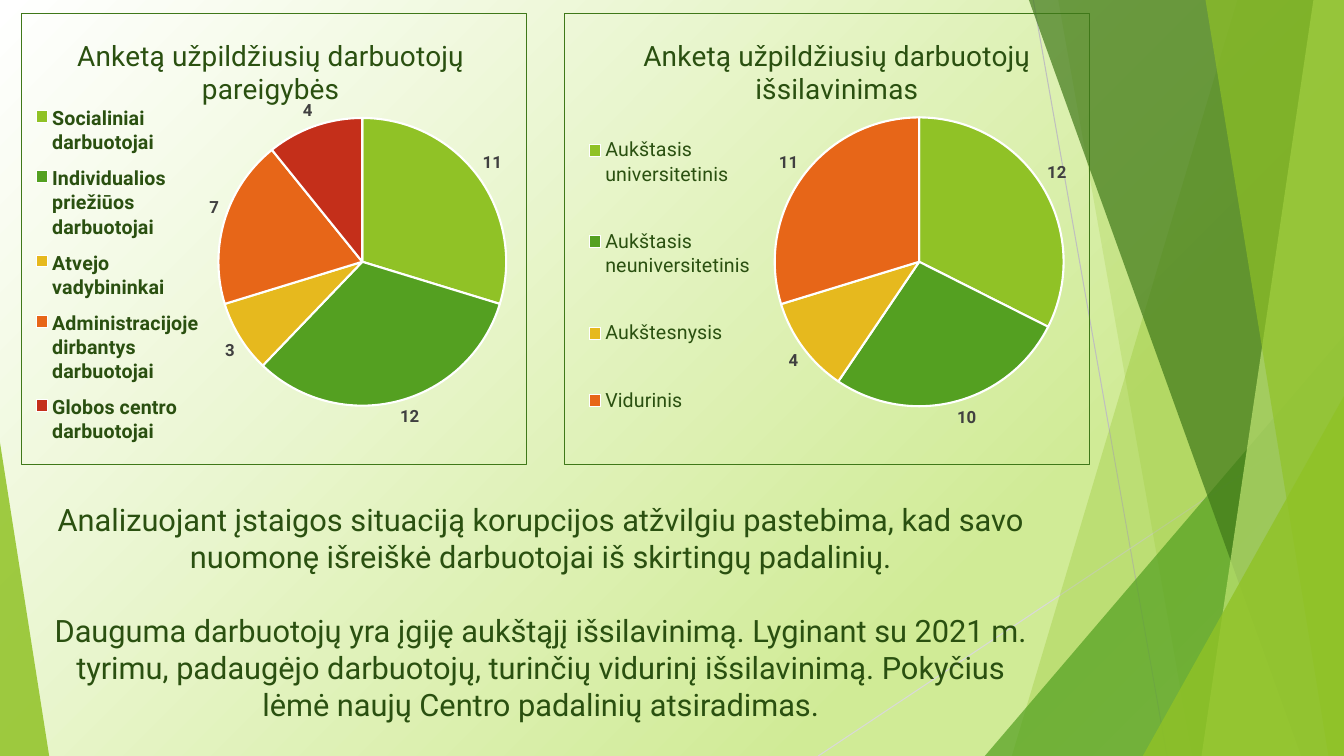
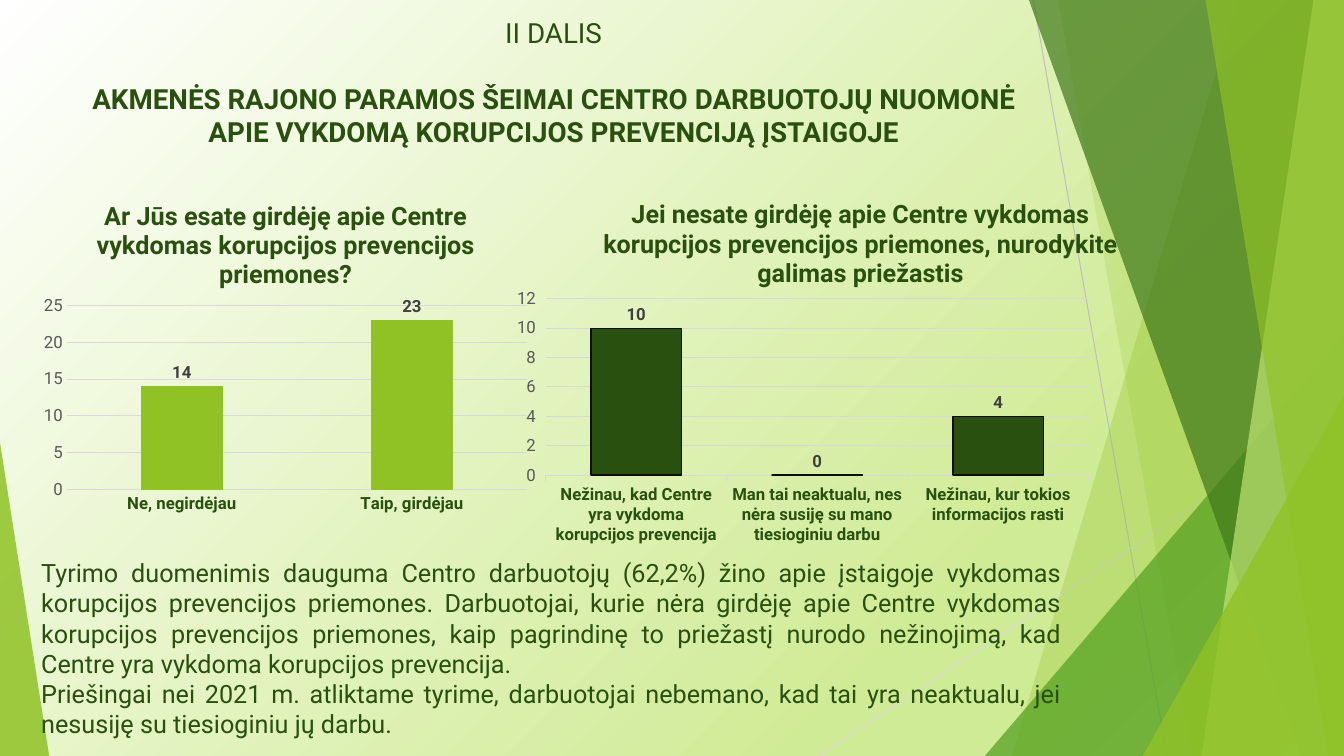
import dataclasses
import typing

import lxml.etree
import pptx
import pptx.chart.data
import pptx.dml.color
import pptx.enum.chart
import pptx.enum.shapes
import pptx.enum.text
import pptx.oxml.ns
import pptx.util

Cm = pptx.util.Cm
Pt = pptx.util.Pt
qn = pptx.oxml.ns.qn
Align = pptx.enum.text.PP_ALIGN
Tick = pptx.enum.chart.XL_TICK_MARK


@dataclasses.dataclass(frozen=True)
class Theme:
    font: str = "Roboto"
    ink: str = "2A5010"
    lime: str = "90C226"
    green: str = "54A021"
    forest: str = "3F7819"
    pale: str = "C0E474"
    white: str = "FFFFFF"
    grid: str = "D9D9D9"
    thread: str = "BFBFBF"
    axis: str = "595959"
    label: str = "404040"
    outline: str = "0D0D0D"
    slices: tuple[str, ...] = ("90C226", "54A021", "E6B91E", "E76618", "C42F1A")
    backdrop: tuple[tuple[int, str], ...] = (
        (0, "FFFFFF"), (74, "D0EB96"), (83, "D0EB96"), (100, "DFF1B9"))
    statement: float = 22
    pie_title: float = 20
    heading: float = 19.8
    body: float = 18
    legend: float = 14
    small: float = 12


THEME = Theme()
WIDTH, HEIGHT = 33.87, 19.05


class Frame(typing.NamedTuple):
    left: float
    top: float
    width: float
    height: float

    def lengths(self) -> tuple[int, ...]:
        return tuple(Cm(value) for value in self)


class Thread(typing.NamedTuple):
    start: tuple[float, float]
    end: tuple[float, float]
    color: str


class Ribbon(typing.NamedTuple):
    top_left: float
    bottom_left: float
    color: str
    opacity: int


class Wedge(typing.NamedTuple):
    frame: Frame
    apex: float
    color: str
    opacity: int


@dataclasses.dataclass(frozen=True)
class ChartPlan:
    frame: Frame
    title: str
    title_at: tuple[float, float]
    plot: tuple[float, float, float, float]
    categories: tuple[str, ...]
    values: tuple[int, ...]


@dataclasses.dataclass(frozen=True)
class PiePlan(ChartPlan):
    legend: tuple[float, float, float, float]
    legend_bold: bool


@dataclasses.dataclass(frozen=True)
class ColumnPlan(ChartPlan):
    color: str
    gap: int
    top: int
    step: int
    tick: typing.Any
    outline: str | None = None


DECOR = (
    Thread((26.04, 0), (29.41, HEIGHT), THEME.thread),
    Thread((WIDTH, 10.24), (20.62, HEIGHT), THEME.grid),
    Ribbon(31.19, 25.5, THEME.lime, 30),
    Ribbon(26.67, 30.05, THEME.lime, 20),
    Wedge(Frame(24.82, 8.46, 9.05, 10.59), 1, THEME.green, 72),
    Ribbon(25.93, 32.79, THEME.forest, 70),
    Ribbon(33.1, 30.28, THEME.pale, 70),
    Ribbon(30.38, 33.48, THEME.lime, 65),
    Wedge(Frame(28.8, 9.98, 5.07, 9.07), 1, THEME.lime, 80),
    Wedge(Frame(0, 11.15, 1.24, 7.9), 0, THEME.lime, 85),
)

PIES = (
    PiePlan(Frame(0.53, 0.33, 12.75, 11.4), "Anketą užpildžiusių darbuotojų pareigybės",
            (0.1, 0.04), (0.39, 0.23, 0.57, 0.64),
            ("Socialiniai darbuotojai", "Individualios priežiūos darbuotojai", "Atvejo vadybininkai",
             "Administracijoje dirbantys darbuotojai", "Globos centro darbuotojai"),
            (11, 12, 3, 7, 4), (0.02, 0.18, 0.34, 0.8), True),
    PiePlan(Frame(14.22, 0.33, 13.26, 11.4), "Anketą užpildžiusių darbuotojų išsilavinimas",
            (0.14, 0.04), (0.39, 0.23, 0.57, 0.64),
            ("Aukštasis universitetinis", "Aukštasis neuniversitetinis", "Aukštesnysis", "Vidurinis"),
            (12, 10, 4, 11), (0.03, 0.18, 0.34, 0.8), False),
)

COLUMNS = (
    ColumnPlan(Frame(0.79, 4.37, 12.75, 8.76),
               "Ar Jūs esate girdėję apie Centre vykdomas korupcijos prevencijos priemones?",
               (0.12, 0.06), (0.07, 0.38, 0.91, 0.53),
               ("Ne, negirdėjau", "Taip, girdėjau"), (14, 23), THEME.lime, 182, 25, 5, Tick.NONE),
    ColumnPlan(Frame(13.03, 4.27, 16.74, 9.88),
               "Jei nesate girdėję apie Centre vykdomas korupcijos prevencijos priemones, "
               "nurodykite galimas priežastis",
               (0.12, 0.06), (0.04, 0.33, 0.82, 0.45),
               ("Nežinau, kad Centre yra vykdoma korupcijos prevencija",
                "Man tai neaktualu, nes nėra susiję su mano tiesioginiu darbu",
                "Nežinau, kur tokios informacijos rasti"),
               (10, 0, 4), THEME.ink, 100, 12, 2, Tick.OUTSIDE, THEME.outline),
)


def rgb(color: str) -> pptx.dml.color.RGBColor:
    return pptx.dml.color.RGBColor.from_string(color)


def style_font(font, size: float, color: str, bold: bool = False) -> None:
    font.name, font.size, font.bold = THEME.font, Pt(size), bold
    font.color.rgb = rgb(color)


def write(para, text: str, *, size: float, bold: bool = False, align=None, after: float = 0) -> None:
    span = para.add_run()
    span.text = text
    style_font(span.font, size, THEME.ink, bold)
    para.alignment = align
    para.space_before, para.space_after = Pt(0), Pt(after)


def prepare(box, frame: Frame):
    box.left, box.top, box.width, box.height = frame.lengths()
    text_frame = box.text_frame
    text_frame.word_wrap = True
    text_frame.auto_size = pptx.enum.text.MSO_AUTO_SIZE.NONE
    text_frame.vertical_anchor = pptx.enum.text.MSO_ANCHOR.TOP
    return text_frame


def paint_background(master) -> None:
    fill = master.background.fill
    fill.gradient()
    fill.gradient_angle = 315
    stops = master.element.xpath("p:cSld/p:bg//a:gsLst")[0]
    for stop in list(stops):
        stops.remove(stop)
    for position, color in THEME.backdrop:
        stop = lxml.etree.SubElement(stops, qn("a:gs"), pos=str(position * 1000))
        lxml.etree.SubElement(stop, qn("a:srgbClr"), val=color)


def draw_thread(page, thread: Thread):
    ends = [Cm(value) for value in (*thread.start, *thread.end)]
    line = page.shapes.add_connector(pptx.enum.shapes.MSO_CONNECTOR.STRAIGHT, *ends)
    line.line.color.rgb = rgb(thread.color)
    line.line.width = Pt(0.75)
    lxml.etree.SubElement(line.element.xpath("p:spPr")[0], qn("a:effectLst"))
    return line


def draw_panel(page, panel: Ribbon | Wedge):
    if isinstance(panel, Ribbon):
        builder = page.shapes.build_freeform(Cm(panel.top_left), 0)
        corners = ((WIDTH, 0), (WIDTH, HEIGHT), (panel.bottom_left, HEIGHT))
        builder.add_line_segments([(Cm(x), Cm(y)) for x, y in corners], close=True)
        shape = builder.convert_to_shape()
    else:
        kind = pptx.enum.shapes.MSO_SHAPE.ISOSCELES_TRIANGLE
        shape = page.shapes.add_shape(kind, *panel.frame.lengths())
        shape.adjustments[0] = panel.apex
    shape.shadow.inherit = False
    shape.line.fill.background()
    shape.fill.solid()
    shape.fill.fore_color.rgb = rgb(panel.color)
    color = shape.element.xpath("p:spPr/a:solidFill/a:srgbClr")[0]
    lxml.etree.SubElement(color, qn("a:alpha"), val=str(panel.opacity * 1000))
    return shape


def decorate_layout(layout, page) -> None:
    for index, item in enumerate(DECOR):
        draw = draw_thread if isinstance(item, Thread) else draw_panel
        element = draw(page, item).element
        element.xpath(".//p:cNvPr")[0].set("id", str(100 + index))
        layout.shapes.element.insert(2 + index, element)


def set_layout(parent, index: int, place: tuple[float, ...], inner: bool = False) -> None:
    for old in parent.findall(qn("c:layout")):
        parent.remove(old)
    layout = lxml.etree.Element(qn("c:layout"))
    manual = lxml.etree.SubElement(layout, qn("c:manualLayout"))
    settings = [("layoutTarget", "inner")] if inner else []
    settings += [("xMode", "edge"), ("yMode", "edge")]
    settings += [(name, str(value)) for name, value in zip("xywh", place)]
    for name, value in settings:
        lxml.etree.SubElement(manual, qn(f"c:{name}"), val=value)
    parent.insert(index, layout)


def clear_fill(border: str | None = None):
    properties = lxml.etree.Element(qn("c:spPr"))
    lxml.etree.SubElement(properties, qn("a:noFill"))
    line = lxml.etree.SubElement(properties, qn("a:ln"), w=str(Pt(0.75)))
    if border:
        fill = lxml.etree.SubElement(line, qn("a:solidFill"))
        lxml.etree.SubElement(fill, qn("a:srgbClr"), val=border)
    else:
        lxml.etree.SubElement(line, qn("a:noFill"))
    return properties


def add_chart(page, plan: ChartPlan, kind, *, title_size: float, title_bold: bool, border: str | None = None):
    data = pptx.chart.data.CategoryChartData()
    data.categories = plan.categories
    data.add_series("Series 1", plan.values)
    chart = page.shapes.add_chart(kind, *plan.frame.lengths(), data).chart
    style_font(chart.font, THEME.small, THEME.ink)
    chart.has_legend = False
    write(chart.chart_title.text_frame.paragraphs[0], plan.title,
          size=title_size, bold=title_bold, align=Align.CENTER)
    chart.chart_title.include_in_layout = False
    set_layout(chart.element.xpath("c:chart/c:title")[0], 1, plan.title_at)
    plot_area = chart.element.xpath("c:chart/c:plotArea")[0]
    set_layout(plot_area, 0, plan.plot, inner=True)
    plot_area.append(clear_fill())
    chart.element.xpath("c:chart")[0].addnext(clear_fill(border))
    plot = chart.plots[0]
    plot.has_data_labels = True
    plot.data_labels.show_value = True
    plot.data_labels.position = pptx.enum.chart.XL_LABEL_POSITION.OUTSIDE_END
    style_font(plot.data_labels.font, THEME.small, THEME.label, True)
    return chart


def add_pie(page, plan: PiePlan) -> None:
    chart = add_chart(page, plan, pptx.enum.chart.XL_CHART_TYPE.PIE,
                      title_size=THEME.pie_title, title_bold=False, border=THEME.forest)
    chart.plots[0].vary_by_categories = True
    for index, color in enumerate(THEME.slices[:len(plan.values)]):
        part = chart.plots[0].series[0].points[index].format
        part.fill.solid()
        part.fill.fore_color.rgb = rgb(color)
        part.line.color.rgb = rgb(THEME.white)
        part.line.width = Pt(1.5)
    chart.has_legend = True
    chart.legend.position = pptx.enum.chart.XL_LEGEND_POSITION.BOTTOM
    chart.legend.include_in_layout = False
    style_font(chart.legend.font, THEME.legend, THEME.ink, plan.legend_bold)
    set_layout(chart.element.xpath("c:chart/c:legend")[0], 1, plan.legend)


def add_columns(page, plan: ColumnPlan) -> None:
    chart = add_chart(page, plan, pptx.enum.chart.XL_CHART_TYPE.COLUMN_CLUSTERED,
                      title_size=THEME.body, title_bold=True)
    plot = chart.plots[0]
    plot.vary_by_categories = False
    plot.gap_width = plan.gap
    bars = plot.series[0].format
    bars.fill.solid()
    bars.fill.fore_color.rgb = rgb(plan.color)
    if plan.outline:
        bars.line.color.rgb = rgb(plan.outline)
        bars.line.width = Pt(1)
    names, scale = chart.category_axis, chart.value_axis
    style_font(names.tick_labels.font, THEME.small, THEME.ink, True)
    style_font(scale.tick_labels.font, THEME.small, THEME.axis)
    names.major_tick_mark = scale.major_tick_mark = plan.tick
    scale.minimum_scale, scale.maximum_scale, scale.major_unit = 0, plan.top, plan.step
    scale.format.line.fill.background()
    scale.has_major_gridlines = True
    for line in (names.format.line, scale.major_gridlines.format.line):
        line.color.rgb = rgb(THEME.grid)
        line.width = Pt(0.75)


def build_staff_page(page) -> None:
    for plan in PIES:
        add_pie(page, plan)
    title = prepare(page.shapes.title, Frame(0.84, 12.5, 25.58, 5.44))
    write(title.paragraphs[0], "Analizuojant įstaigos situaciją korupcijos atžvilgiu pastebima, kad savo "
          "nuomonę išreiškė darbuotojai iš skirtingų padalinių.",
          size=THEME.statement, align=Align.CENTER, after=26)
    write(title.add_paragraph(), "Dauguma darbuotojų yra įgiję aukštąjį išsilavinimą. Lyginant su 2021 m. "
          "tyrimu, padaugėjo darbuotojų, turinčių vidurinį išsilavinimą. Pokyčius lėmė naujų Centro "
          "padalinių atsiradimas.", size=THEME.statement, align=Align.CENTER)


def build_opinion_page(page) -> None:
    title = prepare(page.shapes.title, Frame(2.01, 0.28, 23.88, 3.33))
    write(title.paragraphs[0], "II DALIS", size=THEME.heading, align=Align.CENTER, after=23)
    write(title.add_paragraph(), "AKMENĖS RAJONO PARAMOS ŠEIMAI CENTRO DARBUOTOJŲ NUOMONĖ "
          "APIE VYKDOMĄ KORUPCIJOS PREVENCIJĄ ĮSTAIGOJE",
          size=THEME.heading, bold=True, align=Align.CENTER)
    for plan in COLUMNS:
        add_columns(page, plan)
    frame = Frame(0.79, 13.92, 26.21, 4.88)
    body = prepare(page.shapes.add_textbox(*frame.lengths()), frame)
    write(body.paragraphs[0], "Tyrimo duomenimis dauguma Centro darbuotojų (62,2%) žino apie įstaigoje "
          "vykdomas korupcijos prevencijos priemones. Darbuotojai, kurie nėra girdėję apie Centre vykdomas "
          "korupcijos prevencijos priemones, kaip pagrindinę to priežastį nurodo nežinojimą, kad Centre "
          "yra vykdoma korupcijos prevencija.", size=THEME.body, align=Align.JUSTIFY)
    write(body.add_paragraph(), "Priešingai nei 2021 m. atliktame tyrime, darbuotojai nebemano, kad tai yra "
          "neaktualu, jei nesusiję su tiesioginiu jų darbu.", size=THEME.body, align=Align.JUSTIFY)


def main() -> None:
    deck = pptx.Presentation()
    deck.slide_width, deck.slide_height = Cm(WIDTH), Cm(HEIGHT)
    paint_background(deck.slide_master)
    layout = deck.slide_layouts.get_by_name("Title Only")
    pages = [deck.slides.add_slide(layout) for _ in range(2)]
    decorate_layout(layout, pages[0])
    build_staff_page(pages[0])
    build_opinion_page(pages[1])
    deck.save("out.pptx")


if __name__ == "__main__":
    main()
